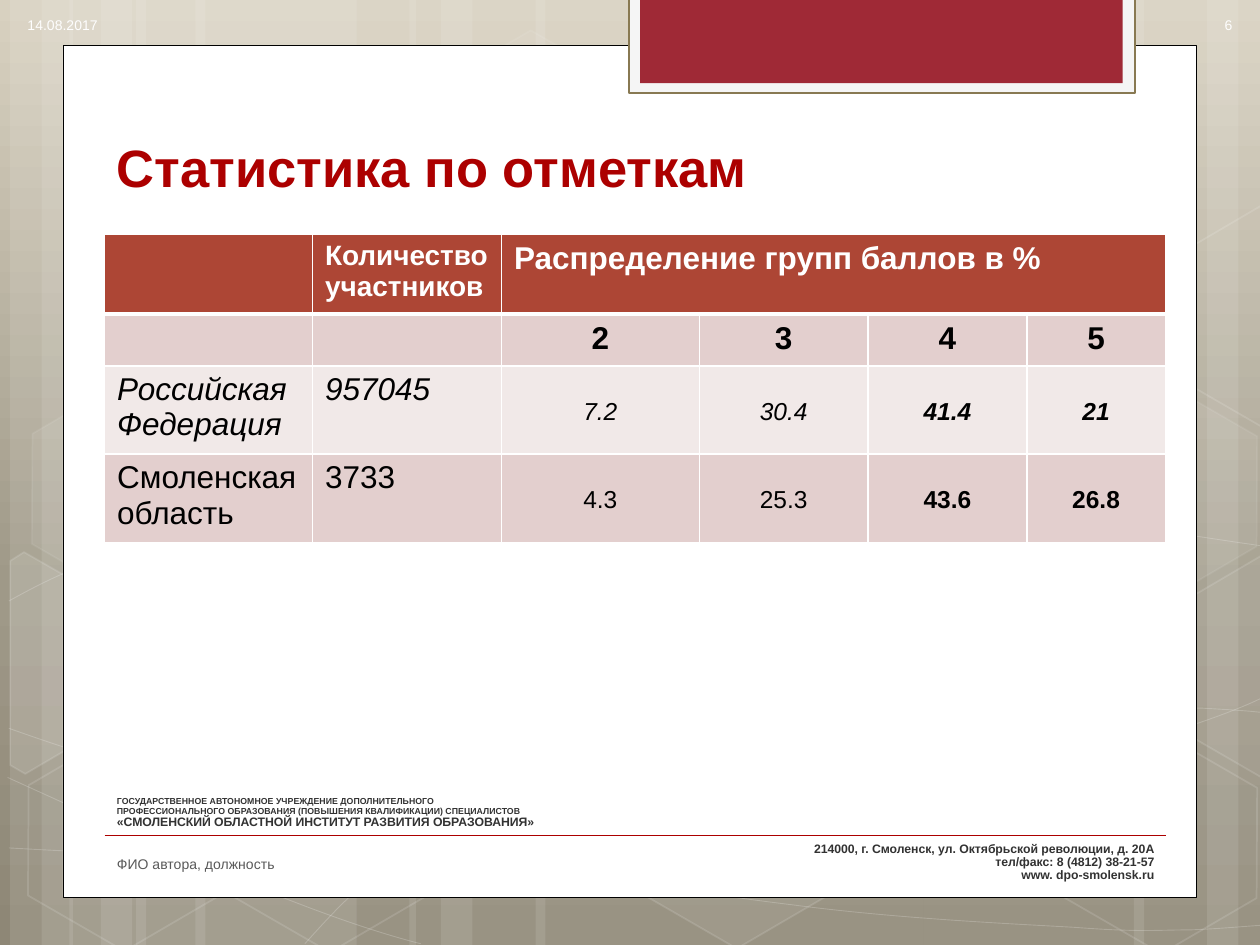
from copy import deepcopy
from dataclasses import dataclass
from math import cos, radians, sin

from lxml.etree import SubElement
from pptx import Presentation
from pptx.dml.color import RGBColor
from pptx.enum.dml import MSO_LINE
from pptx.enum.shapes import MSO_CONNECTOR, MSO_SHAPE
from pptx.enum.text import MSO_ANCHOR, PP_ALIGN
from pptx.oxml.ns import qn
from pptx.util import Pt

PX = 9144  # 100 px to the inch
TILT = 30  # degrees, for every hexagon


@dataclass(frozen=True)
class Theme:
    font: str = "Arial"
    white: str = "FFFFFF"
    black: str = "000000"
    pale: str = "FEFEFE"
    accent: str = "AC0000"
    tab: str = "9F2936"
    tab_frame: str = "F5F5F5"
    tab_line: str = "887952"
    dark: str = "323232"
    grey: str = "595959"
    header: str = "AD4635"
    band: str = "E3CFCE"
    light_band: str = "F1E9E8"
    backdrop: tuple = ((0, "D8D1C0"), (0.62, "9F9988"), (1, "8E8776"))
    title: int = 30
    large: int = 18
    medium: int = 16
    value: int = 14
    small: int = 8
    address: int = 7
    tiny: int = 5


def rgb(color):
    return RGBColor.from_string(color)


def set_alpha(parent, percent):
    for clr in parent.iter(qn("a:srgbClr")):
        SubElement(clr, qn("a:alpha"), val=str(percent * 1000))


def rotate(point, center, degrees):
    a = radians(degrees)
    dx, dy = point[0] - center[0], point[1] - center[1]
    return center[0] + dx * cos(a) - dy * sin(a), center[1] + dx * sin(a) + dy * cos(a)


class SlideBuilder:
    def __init__(self, slide, theme):
        self.s, self.theme = slide, theme

    def background(self):
        fill = self.s.background.fill
        fill.gradient()
        fill.gradient_angle = 270
        first = next(self.s.element.iter(qn("a:gs")))
        first.addnext(deepcopy(first))
        for stop, (position, color) in zip(fill.gradient_stops, self.theme.backdrop):
            stop.position = position
            stop.color.rgb = rgb(color)

    def paint(self, shape, fill, alpha, line, width, line_alpha):
        shape.shadow.inherit = False
        if fill:
            shape.fill.solid()
            shape.fill.fore_color.rgb = rgb(fill)
            if alpha < 100:
                set_alpha(shape.element.spPr, alpha)
        else:
            shape.fill.background()
        if line:
            shape.line.color.rgb = rgb(line)
            shape.line.width = Pt(width)
            if line_alpha < 100:
                set_alpha(shape.element.spPr.find(qn("a:ln")), line_alpha)
        else:
            shape.line.fill.background()

    def shape(self, kind, box, fill=None, alpha=100, line=None, width=1, line_alpha=100):
        sp = self.s.shapes.add_shape(kind, *(v * PX for v in box))
        self.paint(sp, fill, alpha, line, width, line_alpha)
        return sp

    def hexagon(self, x, y, alpha, line_alpha):
        white = self.theme.white
        sp = self.shape(MSO_SHAPE.HEXAGON, (x, y, 175, 152), white if alpha else None,
                        alpha, white, 1, line_alpha)
        sp.adjustments[0] = 0.285
        sp.rotation = TILT

    def outline(self, points, closed=False, alpha=0, width=1, line_alpha=100):
        pts = [(x * PX, y * PX) for x, y in points]
        builder = self.s.shapes.build_freeform(*pts[0])
        builder.add_line_segments(pts[1:], close=closed)
        sp = builder.convert_to_shape()
        white = self.theme.white
        self.paint(sp, white if alpha else None, alpha, white, width, line_alpha)
        return sp

    def cut_hexagon(self, center, points, alpha):
        level = [rotate(point, center, -TILT) for point in points]
        self.outline(level, closed=True, alpha=alpha, line_alpha=12).rotation = TILT

    def curve(self, points):
        """Start point, then two control points and an end point per Bezier segment."""
        sp = self.outline(points, width=0.5, line_alpha=20)
        segments = list(sp.element.iter(qn("a:lnTo")))
        for i in range(0, len(segments), 3):
            bezier = SubElement(segments[i].getparent(), qn("a:cubicBezTo"))
            for segment in segments[i:i + 3]:
                bezier.append(segment[0])
                segment.getparent().remove(segment)

    def rule(self, x1, x2, y, color):
        cxn = self.s.shapes.add_connector(MSO_CONNECTOR.STRAIGHT, x1 * PX, y * PX, x2 * PX, y * PX)
        cxn.element.remove(cxn.element.find(qn("p:style")))
        cxn.line.color.rgb = rgb(color)
        cxn.line.width = Pt(1)
        cxn.line.dash_style = MSO_LINE.SOLID
        SubElement(cxn.element.spPr, qn("a:effectLst"))

    def style(self, p, size, color, bold=False, italic=False, align=PP_ALIGN.LEFT, spacing=None):
        p.alignment = align
        if spacing:
            p.line_spacing = spacing
        f = p.font
        f.name, f.size, f.bold, f.italic = self.theme.font, Pt(size), bold, italic
        f.color.rgb = rgb(color)

    def text(self, box, lines):
        """Each line is (text, size, color, further style options)."""
        tf = self.s.shapes.add_textbox(*(v * PX for v in box)).text_frame
        tf.word_wrap = True
        tf.vertical_anchor = MSO_ANCHOR.MIDDLE
        for i, (text, size, color, options) in enumerate(lines):
            p = tf.add_paragraph() if i else tf.paragraphs[0]
            p.text = text
            self.style(p, size, color, **options)
        return tf

    def cell(self, cell, text, fill, borders, size, color, compact=False, **options):
        pr = cell._tc.get_or_add_tcPr()
        for side, width in zip("LRTB", borders):
            ln = SubElement(pr, qn(f"a:ln{side}"), w=str(Pt(width)))
            SubElement(SubElement(ln, qn("a:solidFill")), qn("a:srgbClr"), val=self.theme.white)
        cell.fill.solid()
        cell.fill.fore_color.rgb = rgb(fill)
        p = cell.text_frame.paragraphs[0]
        p.text = text
        if compact:
            cell.margin_left = cell.margin_right = PX
            cell.margin_top = cell.margin_bottom = 0
            cell.vertical_anchor = MSO_ANCHOR.MIDDLE
            options["spacing"] = 1.15
        self.style(p, size, color, **options)

    def marks_table(self, x, y, widths, row_height, rows):
        t = self.theme
        table = self.s.shapes.add_table(len(rows), len(widths), x * PX, y * PX, sum(widths) * PX,
                                        row_height * len(rows) * PX).table
        for column, width in zip(table.columns, widths):
            column.width = width * PX
        table.cell(0, 2).merge(table.cell(0, 5))
        fills = (t.header, t.band, t.light_band, t.band)
        for i, row in enumerate(rows):
            borders = (1, 1, 3 if i == 1 else 1, 3 if i == 0 else 1)
            for j, text in enumerate(row):
                mark, data = j >= 2, i >= 2
                size = t.value if mark and data else t.medium if (i, j) == (0, 1) else t.large
                self.cell(table.cell(i, j), text, fills[i], borders, size,
                          t.black if i else t.white, compact=mark and data,
                          bold=not data or j >= 4, italic=i == 2,
                          align=PP_ALIGN.CENTER if mark and i else PP_ALIGN.LEFT)


def draw_backdrop(b):
    b.background()
    for x, w in ((108, 175), (8, 50), (33, 83), (155, 175), (55, 50), (80, 83), (733, 175),
                 (958, 50), (900, 83), (425, 308), (325, 50), (350, 83)):
        b.shape(MSO_SHAPE.RECTANGLE, (x, 0, w, 750), b.theme.white, 10)
    for points in (
        [(7, 673), (61, 676), (115, 679), (190, 678), (265, 677), (358, 675), (458, 665),
         (558, 655), (700, 636), (792, 617), (883, 598), (977, 568), (1007, 551)],
        [(7, 477), (36, 461), (65, 446), (121, 431), (178, 416), (259, 394), (347, 387),
         (436, 380), (544, 379), (654, 387), (764, 395), (947, 426), (1007, 434)],
        [(6, 617), (127, 672), (247, 727), (334, 749)],
        [(7, 578), (38, 589), (70, 600), (128, 616), (186, 631), (273, 656), (357, 673),
         (440, 690), (545, 708), (628, 718), (711, 729), (800, 733), (853, 736),
         (905, 740), (919, 738), (945, 738), (971, 737), (989, 735), (1007, 734)],
        [(242, 749), (260, 729), (278, 709), (302, 691), (326, 673), (360, 653), (388, 639),
         (416, 625), (433, 619), (470, 609), (506, 599), (573, 585), (608, 578),
         (644, 571), (649, 571), (680, 569), (711, 566), (760, 563), (794, 562),
         (829, 561), (886, 562), (886, 562), (908, 562), (930, 562), (953, 562),
         (971, 563), (988, 564), (997, 565), (1006, 566), (1003, 565), (1006, 566)],
    ):
        b.curve(points)
    for hexagon in ((334, 36, 4, 8), (497, 589, 6, 12), (11, 591, 0, 12), (14, 312, 7, 8),
                    (174, 592, 0, 12), (753, 453, 10, 12), (834, 593, 0, 12), (834, 314, 7, 8)):
        b.hexagon(*hexagon)
    for center, alpha, points in (
        ((36, 535), 10, [(8, 445), (19, 438), (96, 482), (95, 570), (20, 614), (8, 607)]),
        ((985, 520), 4, [(926, 485), (1001, 441), (1009, 446), (1009, 613), (1002, 617), (926, 573)]),
        ((985, 241), 0, [(926, 207), (1001, 163), (1010, 168), (1009, 335), (1002, 339), (926, 295)]),
    ):
        b.cut_hexagon(center, points, alpha)


def draw_content(b):
    t = b.theme
    b.shape(MSO_SHAPE.RECTANGLE, (50, 36, 900, 676), t.white, line=t.black, width=0.5)
    b.shape(MSO_SHAPE.RECTANGLE, (499, -2, 402, 76), t.tab_frame, line=t.tab_line, width=1.25)
    b.shape(MSO_SHAPE.RECTANGLE, (508, -2, 383, 68), t.tab)
    left = dict(bold=True, spacing=0.9)
    right = dict(left, align=PP_ALIGN.RIGHT)
    tf = b.text((83, 627, 843, 79), [
        ("ГОСУДАРСТВЕННОЕ АВТОНОМНОЕ УЧРЕЖДЕНИЕ ДОПОЛНИТЕЛЬНОГО", t.tiny, t.dark, left),
        ("ПРОФЕССИОНАЛЬНОГО ОБРАЗОВАНИЯ (ПОВЫШЕНИЯ КВАЛИФИКАЦИИ) СПЕЦИАЛИСТОВ", t.tiny, t.dark, left),
        ("«СМОЛЕНСКИЙ ОБЛАСТНОЙ ИНСТИТУТ РАЗВИТИЯ ОБРАЗОВАНИЯ»", t.address, t.dark, left),
        ("214000, г. Смоленск, ул. Октябрьской революции, д. 20А", t.address, t.dark, right),
        ("тел/факс: 8 (4812) 38-21-57", t.address, t.dark, right),
        ("www. dpo-smolensk.ru", t.address, t.dark, right)])
    tf.paragraphs[3].space_before = Pt(7.5)
    b.rule(83, 925, 663, t.accent)
    b.text((83, 92, 843, 81), [("Статистика по отметкам", t.title, t.accent, dict(bold=True))])
    b.marks_table(83, 186, (165, 150, 157, 134, 126, 110), 41, (
        ("", "Количество участников", "Распределение групп баллов в %", "", "", ""),
        ("", "", "2", "3", "4", "5"),
        ("Российская Федерация", "957045", "7.2", "30.4", "41.4", "21"),
        ("Смоленская область", "3733", "4.3", "25.3", "43.6", "26.8")))
    b.text((12, 6, 87, 28), [("14.08.2017", t.small, t.pale, {})])
    b.text((83, 673, 383, 25), [("ФИО автора, должность", t.small, t.grey, {})])
    b.text((941, 6, 47, 28), [("6", t.small, t.pale, dict(align=PP_ALIGN.RIGHT))])


def main():
    prs = Presentation()
    prs.slide_width, prs.slide_height = 1000 * PX, 750 * PX
    b = SlideBuilder(prs.slides.add_slide(prs.slide_layouts[6]), Theme())
    draw_backdrop(b)
    draw_content(b)
    prs.save("out.pptx")


if __name__ == "__main__":
    main()
